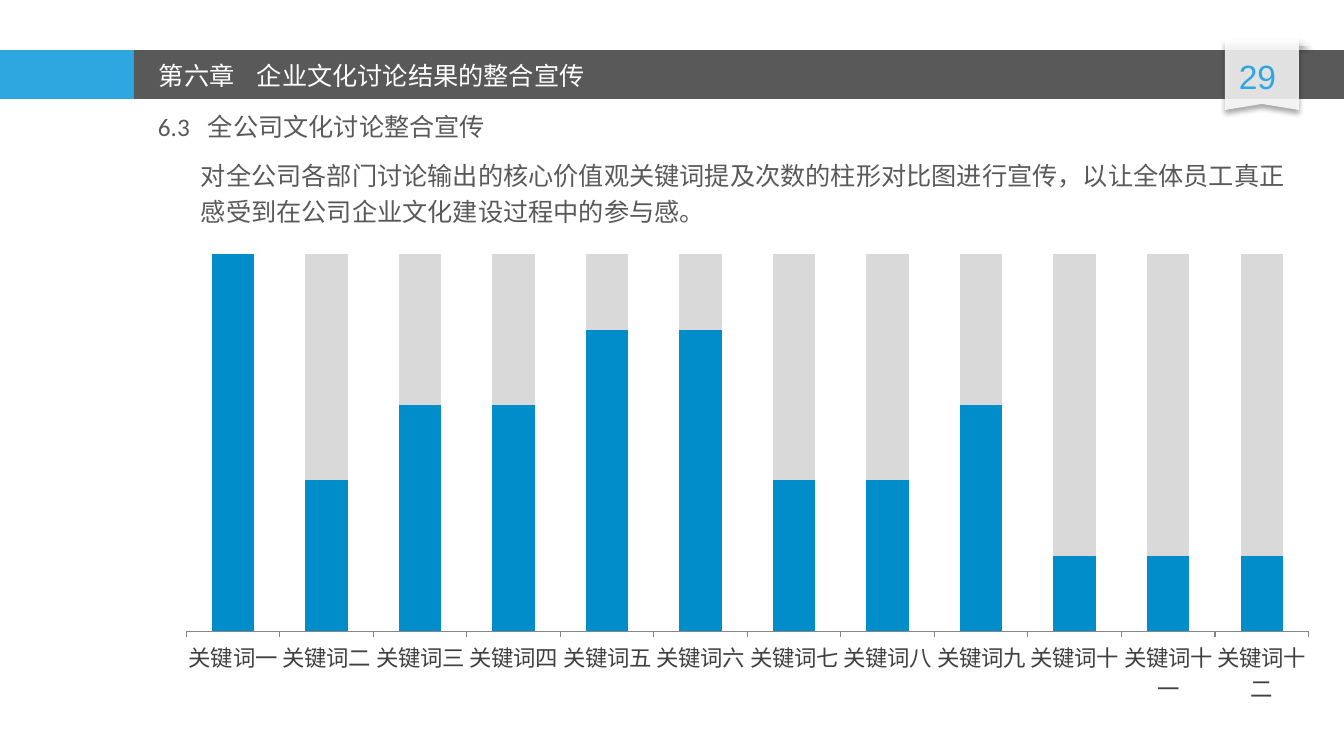
from lxml.etree import SubElement
from pptx import Presentation
from pptx.chart.data import CategoryChartData
from pptx.dml.color import RGBColor
from pptx.enum.chart import XL_CHART_TYPE as ChartType, XL_TICK_MARK as TickMark
from pptx.enum.shapes import MSO_SHAPE as Preset
from pptx.enum.text import PP_ALIGN as Align
from pptx.oxml import parse_xml
from pptx.oxml.ns import nsdecls, qn
from pptx.util import Pt

PX = 12192000 / 1344
COLORS = {
    "blue": "2EA7E0", "bar": "595959", "white": "FFFFFF", "fold": "F8F8F8",
    "black": "000000", "label": "404040", "axis": "868686",
    "total": "D9D9D9", "count": "008DCA",
}
CJK = "Noto Sans CJK SC"
KEYWORDS = ["关键词" + number for number in
            "一 二 三 四 五 六 七 八 九 十 十一 十二".split()]
COUNTS = [100, 40, 60, 60, 80, 80, 40, 40, 60, 20, 20, 20]


def px(length):
    return round(length * PX)


def color(name):
    return RGBColor.from_string(COLORS[name])


def set_values(target, values):
    for name, value in values.items():
        setattr(target, name, value)


def style_font(font, size, color_name, name=CJK):
    set_values(font, {"size": Pt(size), "name": name})
    font.color.rgb = color(color_name)


def set_east_asian(element):
    for latin in list(element.iter(qn("a:latin"))):
        latin.addnext(parse_xml(f'<a:ea {nsdecls("a")} typeface="{CJK}"/>'))


def paint(shape, fill):
    shape.shadow.inherit = False
    shape.fill.solid()
    shape.fill.fore_color.rgb = color(fill)
    shape.line.fill.background()


def make_paper(shape, fill):
    """Translucent fill with a soft shadow below."""
    paint(shape, fill)
    properties = shape._element.spPr
    SubElement(properties.find(f'{qn("a:solidFill")}/{qn("a:srgbClr")}'),
               qn("a:alpha"), val="85000")
    properties.find(qn("a:effectLst")).append(parse_xml(
        f'<a:outerShdw {nsdecls("a")} blurRad="{Pt(4)}" dist="{Pt(3)}" '
        f'dir="5400000" algn="t" rotWithShape="0">'
        f'<a:srgbClr val="{COLORS["black"]}"><a:alpha val="40000"/></a:srgbClr>'
        f'</a:outerShdw>'))


def add_text(page, box, text, size, color_name, font=CJK, tab=None,
             frame_format=None, para_format=None):
    frame = page.shapes.add_textbox(*map(px, box)).text_frame
    set_values(frame, {"word_wrap": True, **(frame_format or {})})
    para = frame.paragraphs[0]
    if tab:
        stops = SubElement(para._p.get_or_add_pPr(), qn("a:tabLst"))
        SubElement(stops, qn("a:tab"), pos=str(px(tab)), algn="l")
    set_values(para, para_format or {})
    span = para.add_run()
    span.text = text
    style_font(span.font, size, color_name, font)
    set_east_asian(para._p)


def add_header(page, left, top, width, height):
    accent = 134
    for x, part, fill in ((left, accent, "blue"),
                          (left + accent, width - accent, "bar")):
        paint(page.shapes.add_shape(
            Preset.RECTANGLE, *map(px, (x, top, part, height))), fill)
    add_text(page, (left + 149, top + 5, 508, 40),
             "第六章\t企业文化讨论结果的整合宣传", 18, "white", tab=98)


def add_page_ribbon(page, left, top, width, height):
    # Folded corner behind the ribbon
    fold = page.shapes.add_shape(
        Preset.RIGHT_TRIANGLE, *map(px, (left + width, top - 2, 12, 8)))
    make_paper(fold, "fold")
    # Ribbon with a notch in its lower edge
    right, bottom = left + width, top + height
    outline = page.shapes.build_freeform(px(left), px(top), scale=1.0)
    outline.add_line_segments(
        [(px(x), px(y)) for x, y in ((right, top), (right, bottom),
                                     (left + width // 2, bottom - 6),
                                     (left, bottom))])
    make_paper(outline.convert_to_shape(), "white")
    add_text(page, (left, top + 11, width, 50), "29", 24, "blue", "Arial",
             frame_format={"margin_right": px(19)},
             para_format={"alignment": Align.CENTER})


def add_section_text(page, left, top, width):
    add_text(page, (left, top, 535, 40), "6.3\t全公司文化讨论整合宣传",
             18, "bar", "Calibri", tab=50)
    add_text(page, (left + 43, top + 43, width - 43, 83),
             "对全公司各部门讨论输出的核心价值观关键词提及次数的柱形对比图进行宣传，"
             "以让全体员工真正感受到在公司企业文化建设过程中的参与感。",
             18, "bar", para_format={"line_spacing": 1.2})


def add_keyword_chart(page, left, top, width, height):
    data = CategoryChartData()
    data.categories = KEYWORDS
    data.add_series("Series 1", [100] * len(KEYWORDS))
    data.add_series("Series 2", COUNTS)
    chart = page.shapes.add_chart(
        ChartType.COLUMN_CLUSTERED, *map(px, (left, top, width, height)),
        data).chart
    set_values(chart, {"has_legend": False, "has_title": False})
    style_font(chart.font, 18, "black", "Calibri")

    # Columns: counts drawn over full-height totals
    plot = chart.plots[0]
    set_values(plot, {"gap_width": 120, "overlap": 100, "vary_by_categories": False})
    for series, fill in zip(plot.series, ("total", "count")):
        series.format.fill.solid()
        series.format.fill.fore_color.rgb = color(fill)

    # Axes, with level labels that wrap
    set_values(chart.value_axis, {
        "minimum_scale": 0, "maximum_scale": 100, "major_unit": 20,
        "has_major_gridlines": False, "visible": False})
    axis = chart.category_axis
    axis.major_tick_mark = TickMark.OUTSIDE
    axis.format.line.color.rgb = color("axis")
    axis.format.line.width = Pt(0.75)
    style_font(axis.tick_labels.font, 16, "label")
    label_body = axis._element.find(f'{qn("c:txPr")}/{qn("a:bodyPr")}')
    label_body.set("rot", "0")
    label_body.set("vert", "horz")
    set_east_asian(chart._chartSpace)

    # Plot area inside the chart frame
    area = chart._chartSpace.chart.plotArea
    for old in area.findall(qn("c:layout")):
        area.remove(old)
    layout = parse_xml(f'<c:layout {nsdecls("c")}><c:manualLayout/></c:layout>')
    for tag, value in (("layoutTarget", "inner"), ("xMode", "edge"),
                       ("yMode", "edge"), ("x", 0.02), ("y", 0.02),
                       ("w", 0.96), ("h", 0.8)):
        SubElement(layout[0], qn(f"c:{tag}"), val=str(value))
    area.insert(0, layout)


def main():
    deck = Presentation()
    set_values(deck, {"slide_width": px(1344), "slide_height": px(756)})
    page = deck.slides.add_slide(deck.slide_layouts[6])
    add_header(page, 0, 50, 1344, 49)
    add_page_ribbon(page, 1225, 40, 74, 70)
    add_section_text(page, 148, 106, 1151)
    add_keyword_chart(page, 163, 245, 1169, 471)
    deck.save("out.pptx")


if __name__ == "__main__":
    main()
